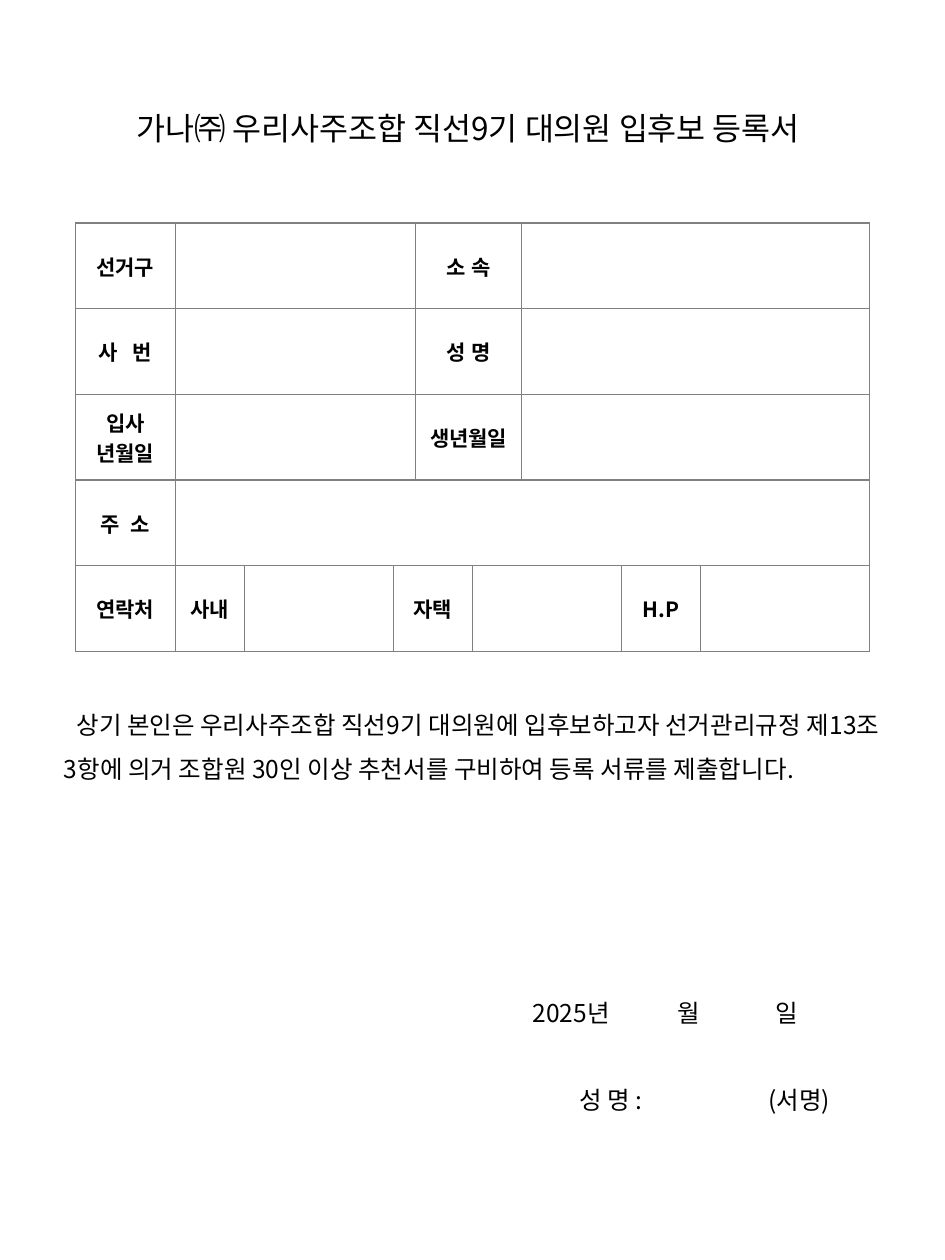
from pptx import Presentation
from pptx.util import Inches, Pt
from pptx.dml.color import RGBColor
from pptx.enum.text import PP_ALIGN, MSO_ANCHOR, MSO_AUTO_SIZE
from pptx.oxml.ns import qn
from lxml.etree import SubElement

# Content
TITLE = "가나㈜ 우리사주조합 직선9기 대의원 입후보 등록서"
PLEDGE = ("상기 본인은 우리사주조합 직선9기 대의원에 입후보하고자 선거관리규정 제13조 3항에 의거 "
          "조합원 30인 이상 추천서를 구비하여 등록 서류를 제출합니다.")
# Signing lines: parts with their tab stops, and space before in points
SIGN = [
    ([("2025년", 3.72), ("월", 4.87), ("일", 5.65)], 114),
    ([("성 명 :", 4.09), ("(서명)", 5.59)], 24.5),
]
# Each cell: text, columns spanned
ROWS = [
    [("선거구", 1), ("", 3), ("소 속", 2), ("", 3)],
    [("사 번", 1), ("", 3), ("성 명", 2), ("", 3)],
    [("입사\n년월일", 1), ("", 3), ("생년월일", 2), ("", 3)],
    [("주 소", 1), ("", 8)],
    [("연락처", 1), ("사내", 1), ("", 1), ("자택", 2), ("", 2), ("H.P", 1), ("", 1)],
]
WIDE = {"사 번": 290, "주 소": 170}  # letter spacing, 1/100 pt
COLS = [0.79, 0.55, 1.18, 0.18, 0.45, 0.39, 0.79, 0.63, 1.34]
ROW_H = 0.68

THEME = dict(font="Noto Sans CJK KR", ink=RGBColor(0, 0, 0), grid="808080",
             line=Pt(0.75), title=Pt(18), body=Pt(14), label=Pt(12))


def write(par, text, size, bold=False, align=PP_ALIGN.LEFT):
    par.alignment = align
    run = par.add_run()
    run.text = text
    looks = dict(size=size, bold=bold, name=THEME["font"])
    for key, value in looks.items():
        setattr(run.font, key, value)
    run.font.color.rgb = THEME["ink"]
    props = run.font._element
    SubElement(props, qn("a:ea"), typeface=THEME["font"])
    if text in WIDE:
        props.set("spc", str(WIDE[text]))


def add_box(slide, *place):
    frame = slide.shapes.add_textbox(*map(Inches, place)).text_frame
    frame.word_wrap = True
    frame.auto_size = MSO_AUTO_SIZE.SHAPE_TO_FIT_TEXT
    return frame


def add_edges(cell):
    props = cell._tc.get_or_add_tcPr()
    for side in ("lnL", "lnR", "lnT", "lnB"):
        edge = SubElement(props, qn(f"a:{side}"), w=str(THEME["line"]))
        fill = SubElement(edge, qn("a:solidFill"))
        SubElement(fill, qn("a:srgbClr"), val=THEME["grid"])
    cell.fill.background()


def add_form(slide):
    table = slide.shapes.add_table(
        len(ROWS), len(COLS), Inches(0.6), Inches(1.77),
        Inches(sum(COLS)), Inches(ROW_H * len(ROWS))).table
    table.first_row = table.horz_banding = False
    for col, width in zip(table.columns, COLS):
        col.width = Inches(width)
    for r, row in enumerate(ROWS):
        table.rows[r].height = Inches(ROW_H)
        for c in range(len(COLS)):
            add_edges(table.cell(r, c))
        c = 0
        for text, span in row:
            cell = table.cell(r, c)
            if span > 1:
                cell.merge(table.cell(r, c + span - 1))
            cell.vertical_anchor = MSO_ANCHOR.MIDDLE
            if text:
                frame = cell.text_frame
                for i, line in enumerate(text.split("\n")):
                    par = frame.add_paragraph() if i else frame.paragraphs[0]
                    write(par, line, THEME["label"], True, PP_ALIGN.CENTER)
            c += span


def add_pledge(slide):
    frame = add_box(slide, 0.41, 5.47, 6.77, 3.48)
    par = frame.paragraphs[0]
    par._p.get_or_add_pPr().set("indent", str(Inches(0.1)))
    par.line_spacing = 1.5
    write(par, PLEDGE, THEME["body"])
    # Date and signature, set on tab stops
    for parts, gap in SIGN:
        par = frame.add_paragraph()
        stops = SubElement(par._p.get_or_add_pPr(), qn("a:tabLst"))
        for _, stop in parts:
            SubElement(stops, qn("a:tab"), pos=str(Inches(stop)), algn="l")
        par.line_spacing = 1.5
        par.space_before = Pt(gap)
        write(par, "".join("\t" + text for text, _ in parts), THEME["body"])


def main():
    deck = Presentation()
    deck.slide_width, deck.slide_height = Inches(7.5), Inches(10)
    slide = deck.slides.add_slide(deck.slide_layouts[6])
    title = add_box(slide, 0.45, 0.82, 6.53, 0.4)
    write(title.paragraphs[0], TITLE, THEME["title"], align=PP_ALIGN.CENTER)
    add_pledge(slide)
    add_form(slide)
    deck.save("out.pptx")


if __name__ == "__main__":
    main()
